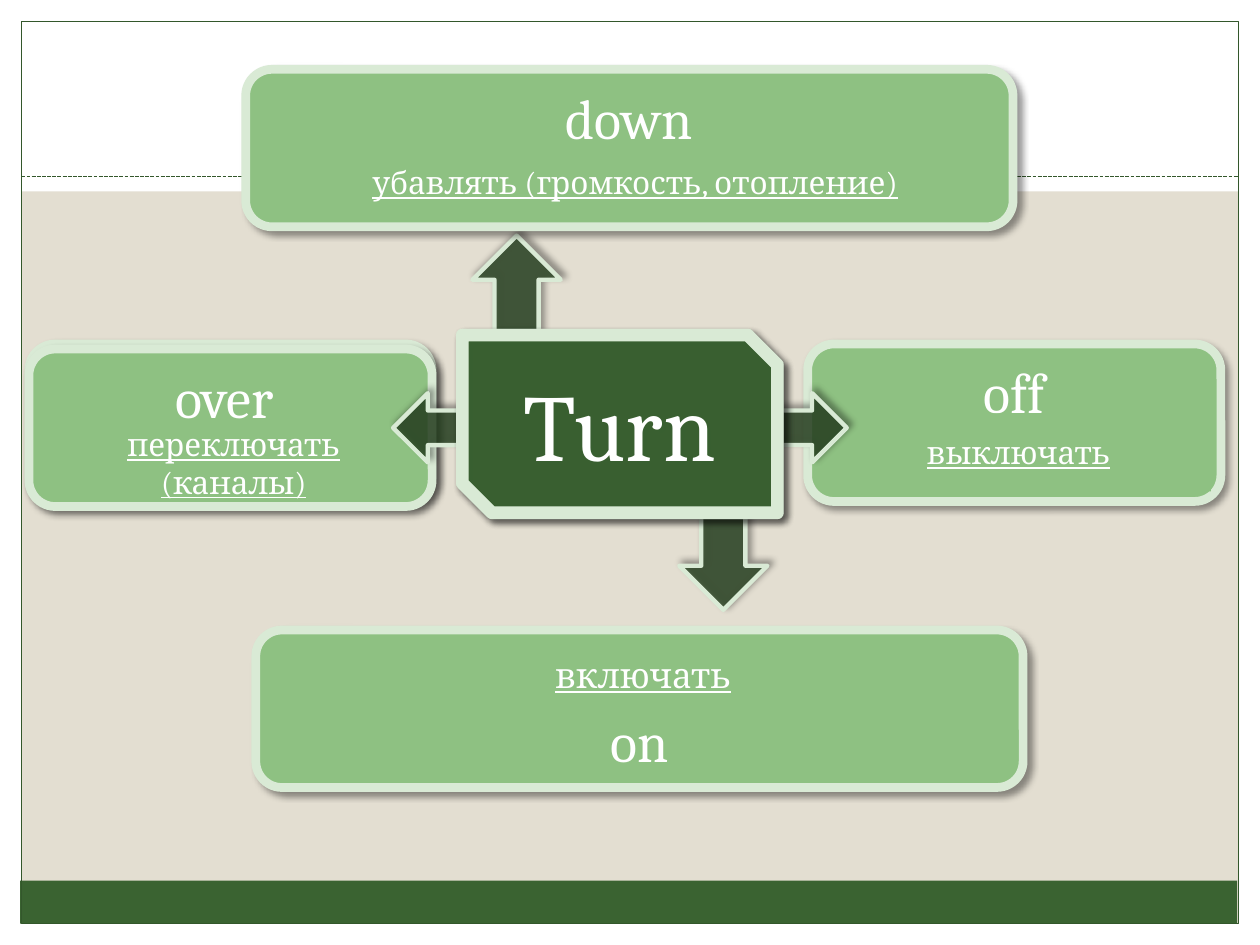
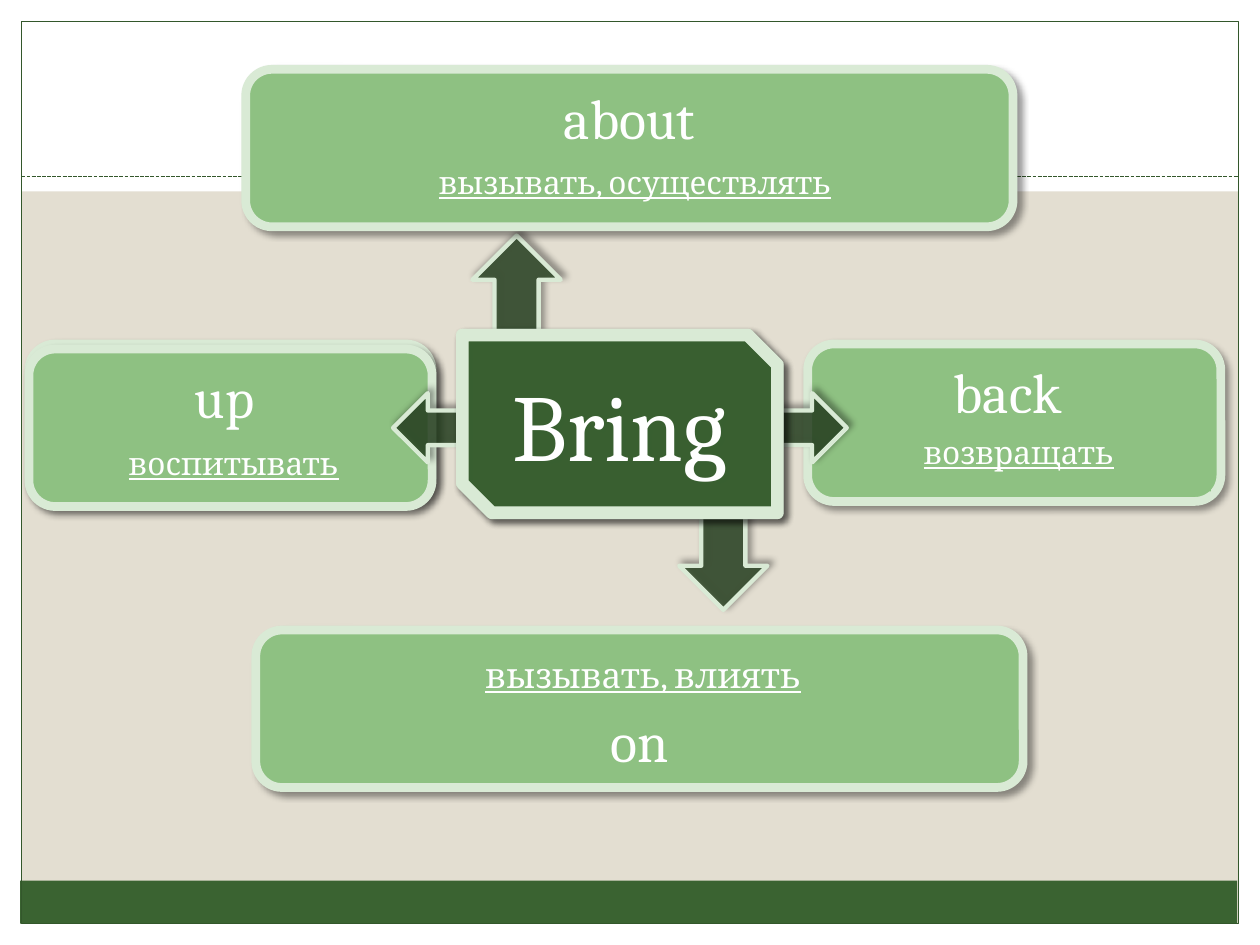
"""Build two phrasal-verb maps: a verb in the centre and four particles around it."""
from pptx import Presentation, util as u
from pptx.dml.color import RGBColor
from pptx.enum import dml, shapes, text
from pptx.oxml import ns, xmlchemy

COLOURS = {
    "background": "E3DED1", "white": "FFFFFF", "footer": "3A6331", "frame": "33572B",
    "card": "8EC182", "outline": "D9EAD5", "arrow": "274221", "hub": "3B6432",
    "shadow": "000000",
}
FONT = "Cambria"
KIND = shapes.MSO_SHAPE
ANCHOR = text.MSO_ANCHOR
PAGE = (0, 0, 720, 540)
MARGIN = 12.24
HUB = (264.24, 191.52, 180, 101.52)

CARDS = {
    "left": {"box": (16.56, 199.44, 230.4, 90), "caption": (8.64, 48.24, 216.72, 33.84)},
    "right": {"box": (461.52, 196.56, 236.16, 90), "caption": (10.8, 39.6, 219.6, 44.64)},
    "bottom": {"box": (146.16, 360, 438.48, 90), "caption": (20.88, 11.52, 401.04, 28.08),
               "anchor": ANCHOR.BOTTOM, "size": 20},
    "top": {"box": (140.4, 39.6, 438.48, 90), "caption": (17.28, 50.4, 410.4, 28.08)},
}
HUB_ARROWS = [
    ((121.0, 103.68, 56.16, 50.4), 90),
    ((2.88, -54.0, 56.16, 50.4), 270),
]
SIDE_ARROWS = [
    ((180, 33.12, 39.6, 39.6), 0),
    ((-39.6, 33.12, 39.6, 39.6), 180),
]
VERBS = [
    ("Turn", {
        "left": ("over ", "переключать (каналы)"),
        "right": ("off", "выключать"),
        "bottom": ("on", "включать"),
        "top": ("down", "убавлять (громкость, отопление)"),
    }),
    ("Bring", {
        "left": ("up ", "воспитывать"),
        "right": ("back ", "возвращать"),
        "bottom": ("on", "вызывать, влиять"),
        "top": ("about", "вызывать, осуществлять"),
    }),
]


def colour(name):
    """Return the named colour."""
    return RGBColor.from_string(COLOURS[name])


def inside(box, offset):
    """Turn a box relative to another box into a slide box."""
    return (box[0] + offset[0], box[1] + offset[1], *offset[2:])


def set_alpha(colour_element, percent):
    """Give a colour element its opacity."""
    alpha = xmlchemy.OxmlElement("a:alpha")
    alpha.set("val", str(percent * 1000))
    colour_element.append(alpha)


def add_shadow(shape, direction):
    """Add the soft outer shadow that falls in a direction in degrees."""
    shadow = xmlchemy.OxmlElement("a:outerShdw")
    values = {"blurRad": u.Pt(4), "dist": u.Pt(3), "dir": direction * 60000, "rotWithShape": 0}
    for name, value in values.items():
        shadow.set(name, str(int(value)))
    tint = xmlchemy.OxmlElement("a:srgbClr")
    tint.set("val", COLOURS["shadow"])
    set_alpha(tint, 40)
    shadow.append(tint)
    shape._element.spPr.find(ns.qn("a:effectLst")).append(shadow)


def add_block(slide, kind, box, fill=None, line=None, width=0, alpha=None, shadow=None):
    """Add a preset shape with its fill, outline and shadow."""
    shape = slide.shapes.add_shape(kind, *map(u.Pt, box))
    shape.shadow.inherit = False
    if fill:
        shape.fill.solid()
        shape.fill.fore_color.rgb = colour(fill)
    else:
        shape.fill.background()
    if line:
        shape.line.color.rgb = colour(line)
        shape.line.width = u.Pt(width)
    else:
        shape.line.fill.background()
    if alpha is not None:
        set_alpha(shape._element.spPr.find(ns.qn("a:solidFill"))[0], alpha)
    if shadow is not None:
        add_shadow(shape, shadow)
    return shape


def write(shape, words, size, anchor=ANCHOR.MIDDLE, underline=False):
    """Write one centred white paragraph in a shape."""
    frame = shape.text_frame
    frame.word_wrap = True
    frame.vertical_anchor = anchor
    paragraph = frame.paragraphs[0]
    paragraph.alignment = text.PP_ALIGN.CENTER
    run = paragraph.add_run()
    run.text = words
    run.font.color.rgb = colour("white")
    for name, value in {"name": FONT, "size": u.Pt(size), "underline": underline}.items():
        setattr(run.font, name, value)


def add_backdrop(slide, page):
    """Draw the white borders, footer band, frame and dashed rule."""
    left, top, width, height = page
    right, bottom = left + width, top + height
    inner = width - 2 * MARGIN
    slide.background.fill.solid()
    slide.background.fill.fore_color.rgb = colour("background")
    for border in [
        (left, bottom - MARGIN, width, MARGIN),
        (left, top, width, 109.44),
        (left, top, MARGIN, height),
        (right - MARGIN, top, MARGIN, height),
    ]:
        add_block(slide, KIND.RECTANGLE, border, "white")
    add_block(slide, KIND.RECTANGLE, (left + 11.52, bottom - 36.72, inner, 24.48), "footer")
    add_block(slide, KIND.RECTANGLE, (left + MARGIN, top + MARGIN, inner, height - 2 * MARGIN),
              line="frame", width=0.75)
    rule_y = top + 100.8
    ends = (left + MARGIN, rule_y, right - MARGIN, rule_y)
    rule = slide.shapes.add_connector(shapes.MSO_CONNECTOR.STRAIGHT, *map(u.Pt, ends))
    rule.line.color.rgb = colour("frame")
    rule.line.width = u.Pt(0.75)
    rule.line.dash_style = dml.MSO_LINE.SQUARE_DOT
    rule._element.spPr.append(xmlchemy.OxmlElement("a:effectLst"))


def add_arrows(slide, hub, arrows):
    """Draw block arrows placed relative to the hub."""
    for offset, rotation in arrows:
        arrow = add_block(slide, KIND.RIGHT_ARROW, inside(hub, offset), "arrow", "outline", 2.5,
                          alpha=79, shadow=315)
        arrow.rotation = rotation


def add_panel(slide, box):
    """Draw the rounded panel of a card."""
    return add_block(slide, KIND.ROUNDED_RECTANGLE, box, "card", "outline", 5, shadow=45)


def add_card(slide, box, caption, particle, meaning, anchor=ANCHOR.TOP, size=18):
    """Draw a card with a particle and its underlined meaning."""
    write(add_panel(slide, box), particle, 32, anchor)
    label = add_block(slide, KIND.RECTANGLE, inside(box, caption), "card")
    write(label, meaning, size, underline=True)


def add_hub(slide, box, verb):
    """Draw the two stacked translucent plates with the verb on top."""
    plates = [add_block(slide, KIND.SNIP_2_DIAG_RECTANGLE, box, "hub", "outline", 7.25,
                        alpha=88, shadow=45) for _ in range(2)]
    write(plates[-1], verb, 54)


def add_verb_slide(presentation, verb, particles):
    """Build the map of one verb."""
    slide = presentation.slides.add_slide(presentation.slide_layouts[6])
    add_backdrop(slide, PAGE)
    add_arrows(slide, HUB, HUB_ARROWS)
    add_panel(slide, inside(CARDS["left"]["box"], (0, -2.88, 230.4, 90)))
    for side, card in CARDS.items():
        particle, meaning = particles[side]
        add_card(slide, particle=particle, meaning=meaning, **card)
    add_arrows(slide, HUB, SIDE_ARROWS)
    add_hub(slide, HUB, verb)


def main():
    """Build and save the presentation."""
    presentation = Presentation()
    presentation.slide_width, presentation.slide_height = map(u.Pt, PAGE[2:])
    for verb, particles in VERBS:
        add_verb_slide(presentation, verb, particles)
    presentation.save("out.pptx")


if __name__ == "__main__":
    main()
